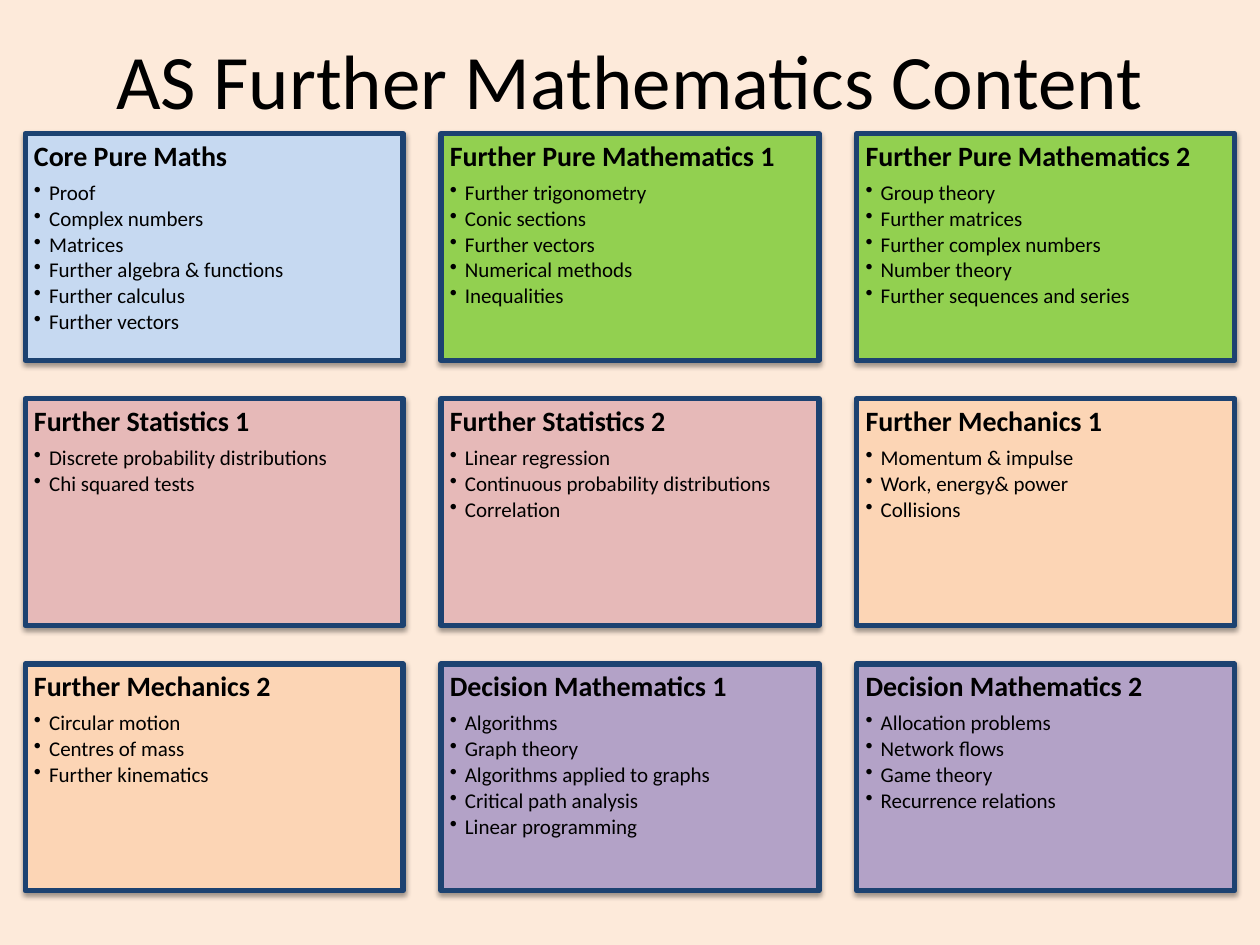
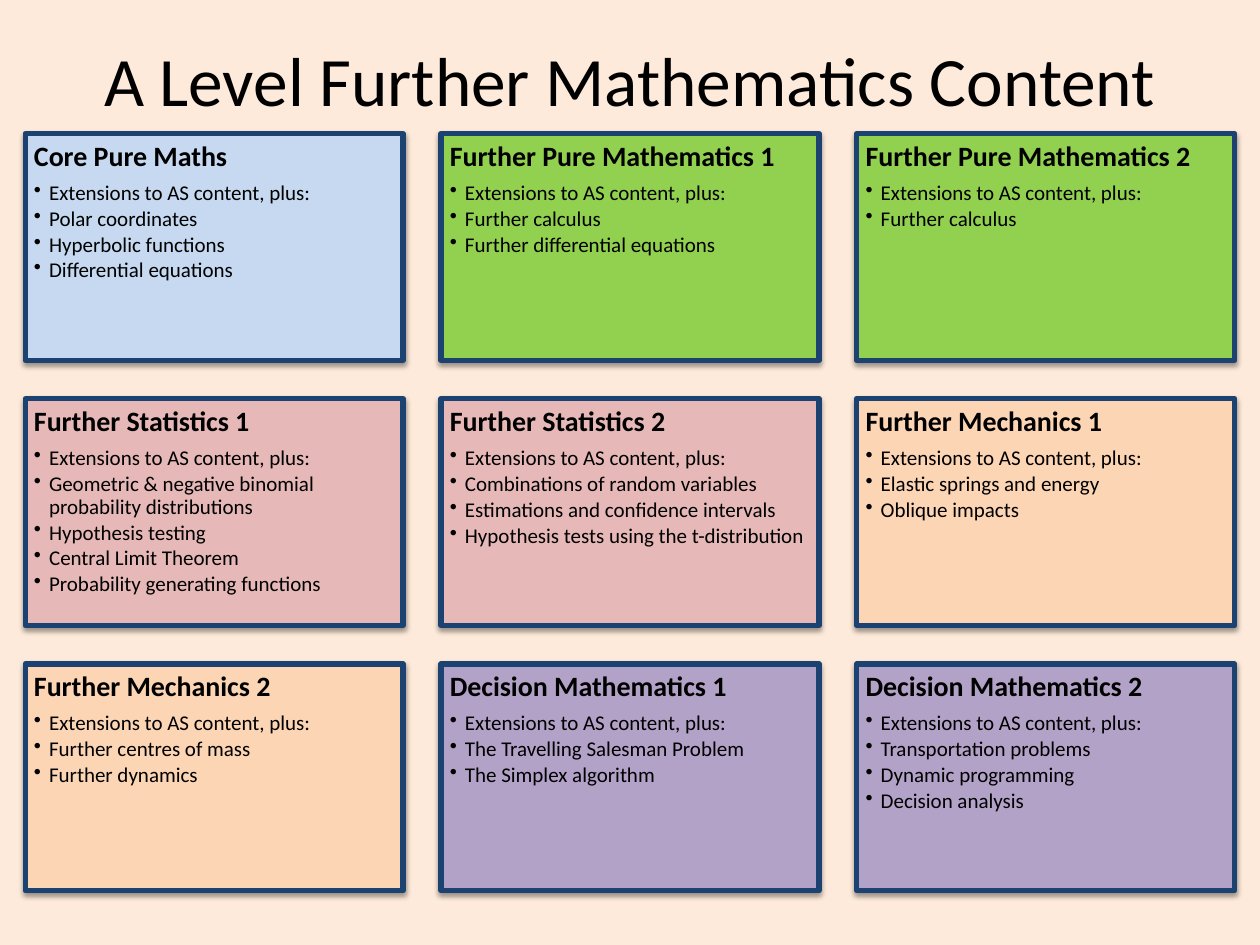
from dataclasses import dataclass

from lxml.etree import SubElement
from pptx import Presentation
from pptx.dml.color import RGBColor as Rgb
from pptx.enum.shapes import MSO_SHAPE as Shape
from pptx.enum.text import MSO_ANCHOR as Anchor, PP_ALIGN as Align
from pptx.oxml.ns import qn
from pptx.util import Inches, Pt


@dataclass(frozen=True)
class Theme:
    font: str = "Calibri"
    background: str = "FDEADA"
    ink: str = "000000"
    border: str = "1C4271"
    core: str = "C6D9F1"
    pure: str = "92D050"
    statistics: str = "E6B9B8"
    mechanics: str = "FCD5B5"
    decision: str = "B3A2C7"
    heading_size: float = 16
    topic_size: float = 12
    border_width: float = 3


THEME = Theme()

MODULES = [
    ("Core Pure Maths", THEME.core),
    ("Further Pure Mathematics 1", THEME.pure),
    ("Further Pure Mathematics 2", THEME.pure),
    ("Further Statistics 1", THEME.statistics),
    ("Further Statistics 2", THEME.statistics),
    ("Further Mechanics 1", THEME.mechanics),
    ("Further Mechanics 2", THEME.mechanics),
    ("Decision Mathematics 1", THEME.decision),
    ("Decision Mathematics 2", THEME.decision),
]

# Topics of each module, in the order of MODULES
AS_TOPICS = [
    ["Proof", "Complex numbers", "Matrices", "Further algebra & functions",
     "Further calculus", "Further vectors"],
    ["Further trigonometry", "Conic sections", "Further vectors",
     "Numerical methods", "Inequalities"],
    ["Group theory", "Further matrices", "Further complex numbers",
     "Number theory", "Further sequences and series"],
    ["Discrete probability distributions", "Chi squared tests"],
    ["Linear regression", "Continuous probability distributions", "Correlation"],
    ["Momentum & impulse", "Work, energy& power", "Collisions"],
    ["Circular motion", "Centres of mass", "Further kinematics"],
    ["Algorithms", "Graph theory", "Algorithms applied to graphs",
     "Critical path analysis", "Linear programming"],
    ["Allocation problems", "Network flows", "Game theory",
     "Recurrence relations"],
]

EXTENSIONS = "Extensions to AS content, plus:"
A_LEVEL_ADDITIONS = [
    ["Polar coordinates", "Hyperbolic functions", "Differential equations"],
    ["Further calculus", "Further differential equations"],
    ["Further calculus"],
    ["Geometric & negative binomial probability distributions",
     "Hypothesis testing", "Central Limit Theorem",
     "Probability generating functions"],
    ["Combinations of random variables", "Estimations and confidence intervals",
     "Hypothesis tests using the t-distribution"],
    ["Elastic springs and energy", "Oblique impacts"],
    ["Further centres of mass", "Further dynamics"],
    ["The Travelling Salesman Problem", "The Simplex algorithm"],
    ["Transportation problems", "Dynamic programming", "Decision analysis"],
]
A_LEVEL_TOPICS = [[EXTENSIONS, *additions] for additions in A_LEVEL_ADDITIONS]

TITLE_BOX = (0.5, 0, 9, 1.25)
GRID_BOX = (0.2, 1.06, 9.6, 6.01)
CARD_WIDTH, CARD_HEIGHT = 3, 1.8
COLUMNS = ROWS = 3


def add_text(paragraph, text, size, bold=False):
    run = paragraph.add_run()
    run.text = text
    run.font.name = THEME.font
    run.font.size = Pt(size)
    run.font.bold = bold
    run.font.color.rgb = Rgb.from_string(THEME.ink)


def add_bullet(paragraph):
    properties = paragraph._p.get_or_add_pPr()
    indent = Inches(0.12)
    properties.set("marL", str(indent))
    properties.set("indent", str(-indent))
    SubElement(properties, qn("a:buChar"), char="•")


def add_soft_shadow(shape):
    shape.shadow.inherit = False
    effects = shape._element.spPr.find(qn("a:effectLst"))
    shadow = SubElement(effects, qn("a:outerShdw"), blurRad=str(Pt(3.1)),
                        dist=str(Pt(1.6)), dir="5400000", rotWithShape="0")
    color = SubElement(shadow, qn("a:srgbClr"), val="000000")
    SubElement(color, qn("a:alpha"), val="38000")


def add_title(slide, box, text, size):
    title = slide.shapes.add_textbox(*map(Inches, box))
    frame = title.text_frame
    frame.word_wrap = True
    frame.vertical_anchor = Anchor.MIDDLE
    paragraph = frame.paragraphs[0]
    paragraph.alignment = Align.CENTER
    add_text(paragraph, text, size)


def add_module_card(slide, box, heading, color, topics):
    card = slide.shapes.add_shape(Shape.RECTANGLE, *map(Inches, box))
    card.fill.solid()
    card.fill.fore_color.rgb = Rgb.from_string(color)
    card.line.color.rgb = Rgb.from_string(THEME.border)
    card.line.width = Pt(THEME.border_width)
    add_soft_shadow(card)

    frame = card.text_frame
    frame.word_wrap = True
    frame.vertical_anchor = Anchor.TOP
    frame.margin_left = frame.margin_right = Inches(0.07)
    frame.margin_top = frame.margin_bottom = Inches(0.07)

    heading_line = frame.paragraphs[0]
    heading_line.space_after = Pt(0.35 * THEME.heading_size)
    add_text(heading_line, heading, THEME.heading_size, bold=True)
    for topic in topics:
        topic_line = frame.add_paragraph()
        topic_line.level = 1
        topic_line.space_after = Pt(0.15 * THEME.topic_size)
        add_bullet(topic_line)
        add_text(topic_line, topic, THEME.topic_size)
    for paragraph in frame.paragraphs:
        paragraph.alignment = Align.LEFT
        paragraph.line_spacing = 0.9


def add_module_grid(slide, box, topic_lists):
    left, top, width, height = box
    column_step = (width - CARD_WIDTH) / (COLUMNS - 1)
    row_step = (height - CARD_HEIGHT) / (ROWS - 1)
    for index, ((heading, color), topics) in enumerate(zip(MODULES, topic_lists)):
        row, column = divmod(index, COLUMNS)
        card_box = (left + column * column_step, top + row * row_step,
                    CARD_WIDTH, CARD_HEIGHT)
        add_module_card(slide, card_box, heading, color, topics)


def add_content_slide(deck, title, title_size, topic_lists):
    slide = deck.slides.add_slide(deck.slide_layouts[6])
    slide.background.fill.solid()
    slide.background.fill.fore_color.rgb = Rgb.from_string(THEME.background)
    add_title(slide, TITLE_BOX, title, title_size)
    add_module_grid(slide, GRID_BOX, topic_lists)


def main():
    deck = Presentation()
    deck.slide_width, deck.slide_height = Inches(10), Inches(7.5)
    add_content_slide(deck, "AS Further Mathematics Content", 44, AS_TOPICS)
    add_content_slide(deck, "A Level Further Mathematics Content", 39.6,
                      A_LEVEL_TOPICS)
    deck.save("out.pptx")


if __name__ == "__main__":
    main()
